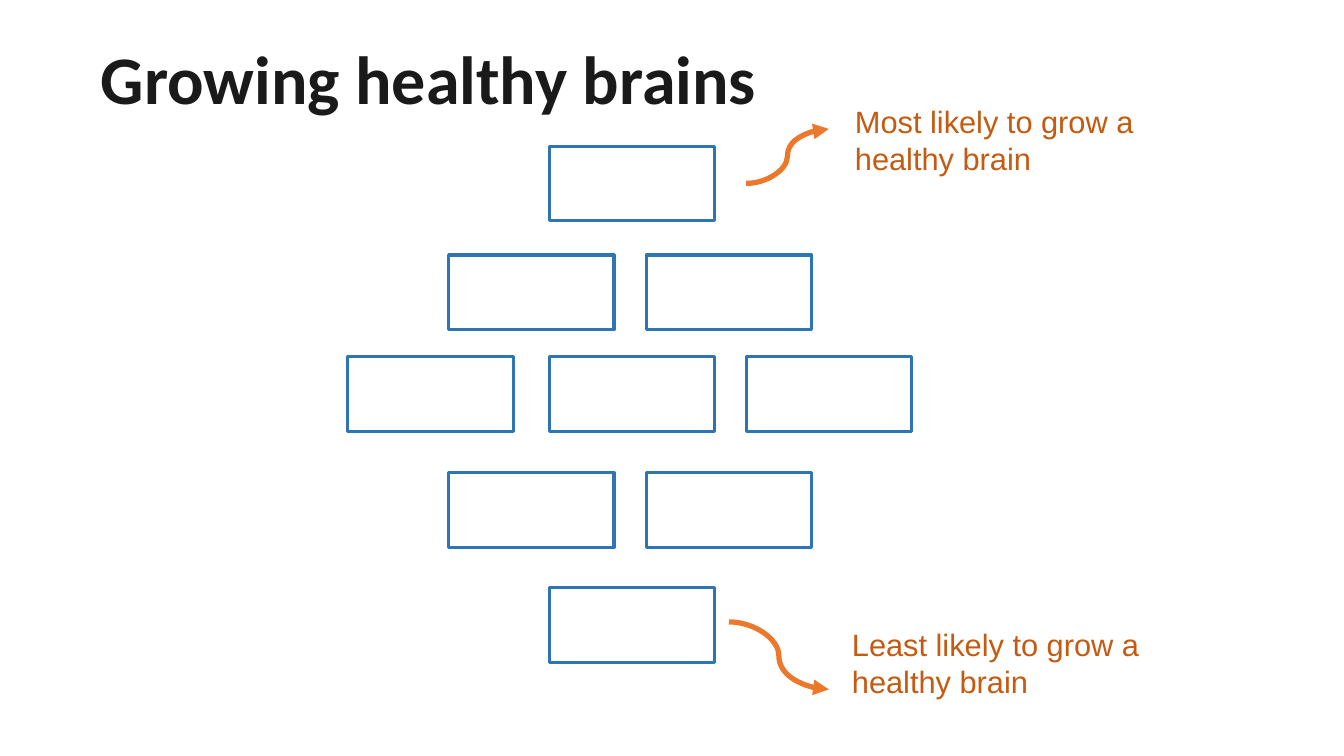
import pptx
import pptx.dml.color
import pptx.enum.shapes
import pptx.enum.text
import pptx.oxml
import pptx.oxml.ns
import pptx.util
from dataclasses import dataclass

PX = 9144


@dataclass(frozen=True)
class Theme:
    title_color: str = "1A1A1A"
    label_color: str = "C55A11"
    box_color: str = "2E75B6"
    arrow_color: str = "EC792B"
    title_font: str = "Calibri"
    label_font: str = "Arial"
    title_size: float = 48.6
    label_size: float = 22
    box_line: float = 2.25
    arrow_line: float = 3.75


class SlideBuilder:
    """Draws themed elements on one slide, with lengths in px at 100 to the inch."""

    def __init__(self, slide, theme):
        self.slide = slide
        self.theme = theme

    def text(self, content, left, top, width, height, font, size, color, bold=False, inset=0):
        shape = self.slide.shapes.add_textbox(left * PX, top * PX, width * PX, height * PX)
        frame = shape.text_frame
        frame.word_wrap = True
        frame.margin_left = frame.margin_right = inset * PX
        frame.margin_top = frame.margin_bottom = 0
        frame.text = content
        run_font = frame.paragraphs[0].runs[0].font
        run_font.name = font
        run_font.size = pptx.util.Pt(size)
        run_font.bold = bold
        run_font.color.rgb = pptx.dml.color.RGBColor.from_string(color)
        return shape

    def title(self, content, left, top, width, height):
        theme = self.theme
        shape = self.text(content, left, top, width, height, theme.title_font,
                          theme.title_size, theme.title_color, bold=True, inset=10)
        shape.text_frame.vertical_anchor = pptx.enum.text.MSO_ANCHOR.MIDDLE
        shape.text_frame.paragraphs[0].line_spacing = 0.9

    def label(self, content, left, top):
        theme = self.theme
        shape = self.text(content, left, top, 343, 74, theme.label_font,
                          theme.label_size, theme.label_color)
        shape.text_frame.auto_size = pptx.enum.text.MSO_AUTO_SIZE.SHAPE_TO_FIT_TEXT

    def box(self, left, top):
        shape = self.slide.shapes.add_shape(
            pptx.enum.shapes.MSO_SHAPE.RECTANGLE, left * PX, top * PX, 164 * PX, 74 * PX)
        shape.shadow.inherit = False
        shape.fill.background()
        self.line(shape.line, self.theme.box_color, self.theme.box_line)

    def curved_arrow(self, start, end):
        connector = self.slide.shapes.add_connector(
            pptx.enum.shapes.MSO_CONNECTOR.CURVE, *(value * PX for value in start + end))
        self.line(connector.line, self.theme.arrow_color, self.theme.arrow_line)
        line_element = connector.line._get_or_add_ln()
        tail = pptx.oxml.ns.qn("a:tailEnd")
        line_element.append(line_element.makeelement(tail, {"type": "triangle"}))
        properties = connector._element.spPr
        properties.append(properties.makeelement(pptx.oxml.ns.qn("a:effectLst"), {}))

    def line(self, line, color, width):
        line.color.rgb = pptx.dml.color.RGBColor.from_string(color)
        line.width = pptx.util.Pt(width)


def main():
    presentation = pptx.Presentation()
    presentation.slide_width = 1333 * PX
    presentation.slide_height = 750 * PX
    slide = presentation.slides.add_slide(presentation.slide_layouts[6])
    builder = SlideBuilder(slide, Theme())

    builder.title("Growing healthy brains", 90, 0, 875, 164)

    column_lefts = (345, 445, 545, 641, 740)
    diamond_rows = ((145, (2,)), (253, (1, 3)), (354, (0, 2, 4)), (469, (1, 3)), (583, (2,)))
    for top, columns in diamond_rows:
        for column in columns:
            builder.box(column_lefts[column], top)

    builder.curved_arrow((740, 182), (822, 128))
    builder.label("Most likely to grow a healthy brain", 848, 102)
    builder.curved_arrow((723, 617), (822, 684))
    builder.label("Least likely to grow a healthy brain", 845, 621)

    presentation.save("out.pptx")


if __name__ == "__main__":
    main()
